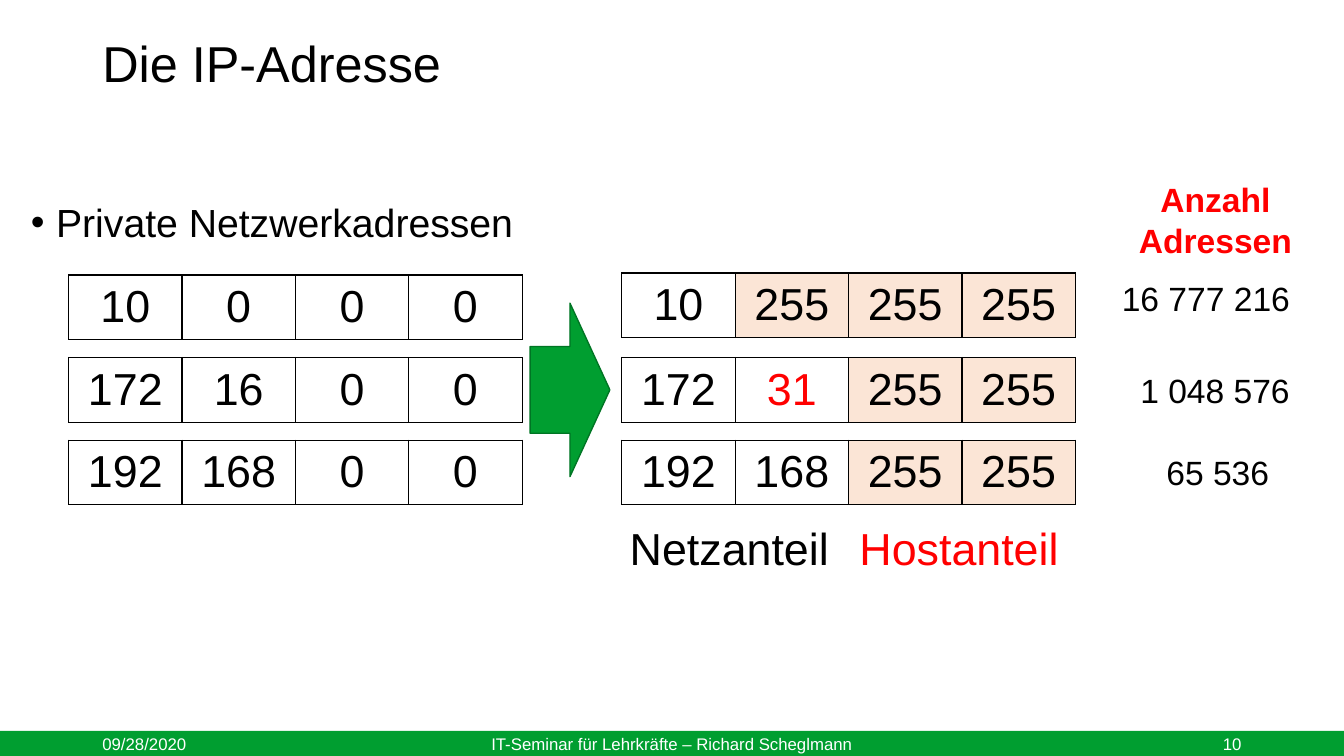
from lxml import etree
from pptx import Presentation
from pptx import util as u
from pptx.dml.color import RGBColor
from pptx.enum import shapes, text
from pptx.oxml.ns import qn

COLORS = {"green": "009E30", "dark_green": "007524", "black": "000000",
          "white": "FFFFFF", "red": "FF0000", "peach": "FBE5D6"}
ALIGN = text.PP_ALIGN
MIDDLE = text.MSO_ANCHOR.MIDDLE
WIDTH, HEIGHT = 33.87, 19.05

FROM_ADDRESSES = (("10", "0", "0", "0"), ("172", "16", "0", "0"), ("192", "168", "0", "0"))
TO_ADDRESSES = (("10", "255", "255", "255"), ("172", "31", "255", "255"),
                ("192", "168", "255", "255"))


def rgb(name):
    """Return the palette colour of that name."""
    return RGBColor.from_string(COLORS[name])


def write(frame, wording, size=24, color="black", bold=False, align=ALIGN.LEFT,
          spacing=None, bullet=False):
    """Write one paragraph per line of wording into a text frame."""
    for number, line in enumerate(wording.split("\n")):
        paragraph = frame.add_paragraph() if number else frame.paragraphs[0]
        paragraph.alignment = align
        if spacing:
            paragraph.line_spacing = spacing
        if bullet:
            properties = paragraph._p.get_or_add_pPr()
            properties.set("marL", str(u.Cm(0.635)))
            properties.set("indent", str(-u.Cm(0.635)))
            etree.SubElement(properties, qn("a:buFont")).set("typeface", "Arial")
            etree.SubElement(properties, qn("a:buChar")).set("char", "•")
        run = paragraph.add_run()
        run.text = line
        run.font.name = "Arial"
        run.font.size = u.Pt(size)
        run.font.bold = bold
        run.font.color.rgb = rgb(color)


def label(slide, box, wording, anchor=text.MSO_ANCHOR.TOP, wrap=True, **style):
    """Place a text box in the given box."""
    frame = slide.shapes.add_textbox(*map(u.Cm, box)).text_frame
    frame.word_wrap = wrap
    frame.vertical_anchor = anchor
    write(frame, wording, **style)


def block(slide, kind, box, fill, line=None):
    """Place a filled shape, outlined if a line colour is given."""
    shape = slide.shapes.add_shape(kind, *map(u.Cm, box))
    shape.shadow.inherit = False
    shape.fill.solid()
    shape.fill.fore_color.rgb = rgb(fill)
    if line:
        shape.line.color.rgb = rgb(line)
        shape.line.width = u.Pt(1)
    else:
        shape.line.fill.background()


def outline(cell):
    """Draw a thin black border around a table cell."""
    properties = cell._tc.get_or_add_tcPr()
    for side in ("a:lnL", "a:lnR", "a:lnT", "a:lnB"):
        border = etree.SubElement(properties, qn(side), w=str(u.Pt(1)))
        fill = etree.SubElement(border, qn("a:solidFill"))
        etree.SubElement(fill, qn("a:srgbClr"), val=COLORS["black"])


def address(slide, box, octets):
    """Place an address as a row of octets, with its host part shaded."""
    table = slide.shapes.add_table(1, len(octets), *map(u.Cm, box)).table
    table.first_row = table.horz_banding = False
    for cell, octet in zip(table.rows[0].cells, octets):
        outline(cell)
        if octet == "255":
            cell.fill.solid()
            cell.fill.fore_color.rgb = rgb("peach")
        else:
            cell.fill.background()
        cell.vertical_anchor = MIDDLE
        write(cell.text_frame, octet, size=32, align=ALIGN.CENTER,
              color="red" if octet == "31" else "black")


def heading(slide, left, top):
    """Place the title and the bullet below it."""
    label(slide, (left + 1.8, top, 26.8, 1.32), "Die IP-Adresse", anchor=MIDDLE,
          size=36, spacing=0.9)
    label(slide, (left, top + 3.98, 24.2, 1.78), "Private Netzwerkadressen",
          size=28, spacing=0.9, bullet=True)


def ranges(slide, left, top):
    """Place the first and last addresses with the arrow and part names."""
    width, height, pitch, last = 11.43, 1.63, 2.08, left + 13.94
    for row, (start, end) in enumerate(zip(FROM_ADDRESSES, TO_ADDRESSES)):
        row_top = top + row * pitch
        address(slide, (left, row_top, width, height), start)
        lift = 0 if row else 0.05
        address(slide, (last, row_top - lift, width, height), end)
    block(slide, shapes.MSO_SHAPE.RIGHT_ARROW, (left + 11.63, top + 0.71, 2.01, 4.37),
          "green", "dark_green")
    label(slide, (last - 0.05, top + 6.07, 5.59, 1.63), "Netzanteil", wrap=False, size=32)
    label(slide, (last + 5.74, top + 6.07, 5.59, 1.63), "Hostanteil", wrap=False,
          size=32, color="red")


def counts(slide, left, top):
    """Place the column with the number of addresses."""
    label(slide, (left + 0.99, top, 4.42, 2.31), "Anzahl\nAdressen", wrap=False,
          color="red", bold=True, align=ALIGN.CENTER)
    for shift, drop, count in ((0, 2.49, "16 777 216"), (0.23, 4.8, "1 048 576"),
                               (0.3, 6.88, "65 536")):
        label(slide, (left + shift, top + drop, 5.92, 1.28), count, align=ALIGN.CENTER)


def footer(slide, top, height):
    """Place the green bar with date, seminar and slide number."""
    block(slide, shapes.MSO_SHAPE.RECTANGLE, (0, top, WIDTH, height), "green")
    for left, width, wording, align in (
            (2.33, 7.62, "09/28/2020", ALIGN.LEFT),
            (11.22, 11.43, "IT-Seminar für Lehrkräfte – Richard Scheglmann", ALIGN.CENTER),
            (23.92, 7.62, "10", ALIGN.RIGHT)):
        label(slide, (left, top, width, height), wording, anchor=MIDDLE, size=12,
              color="white", align=align)


def main():
    """Build the slide and save it."""
    deck = Presentation()
    deck.slide_width, deck.slide_height = u.Cm(WIDTH), u.Cm(HEIGHT)
    slide = deck.slides.add_slide(deck.slide_layouts[6])
    footer(slide, 18.42, 0.63)
    heading(slide, 0.53, 1.02)
    ranges(slide, 1.73, 6.93)
    counts(slide, 27.43, 4.39)
    deck.save("out.pptx")


if __name__ == "__main__":
    main()
